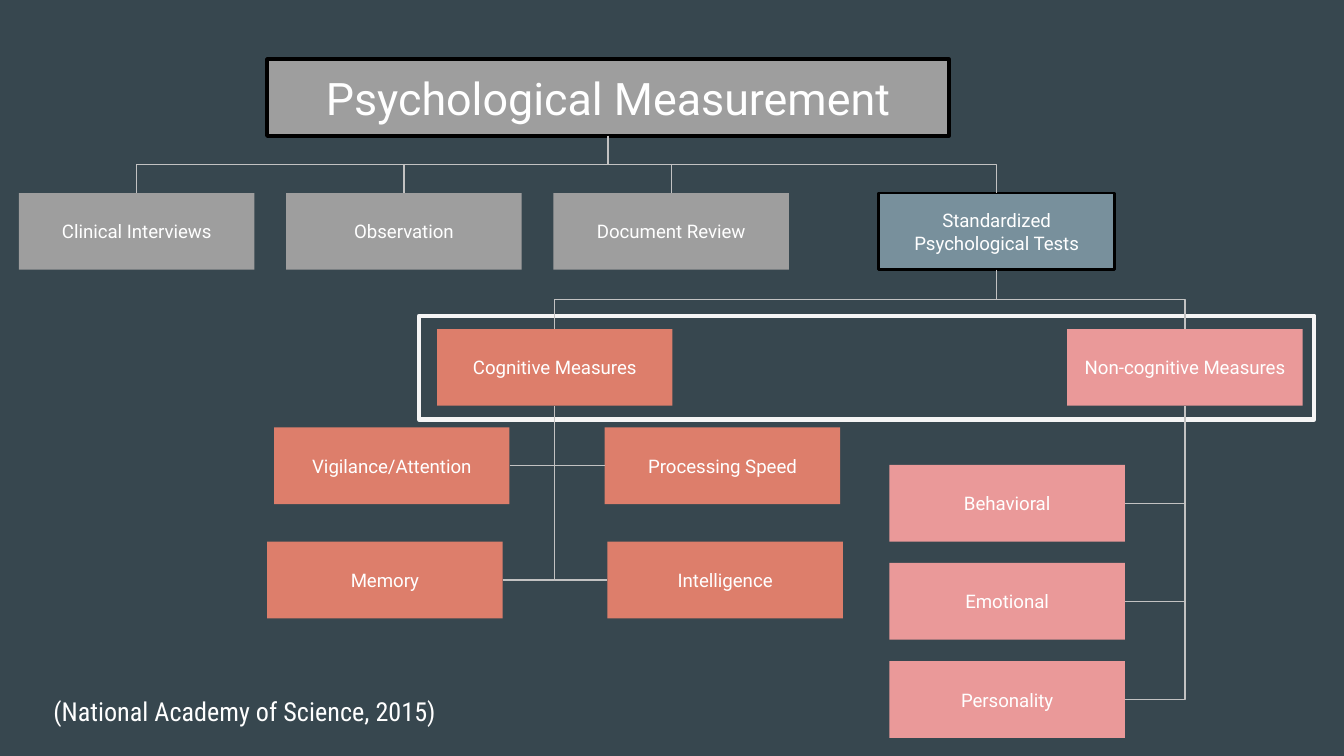
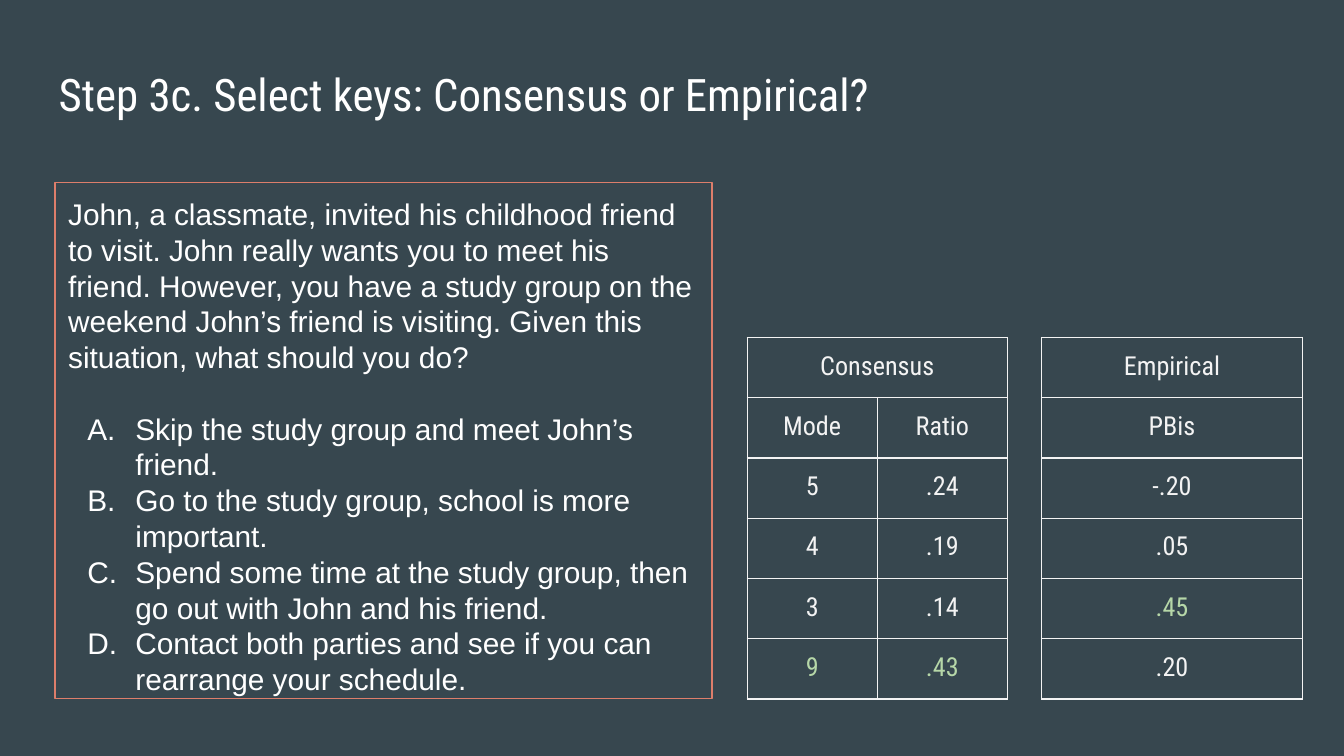
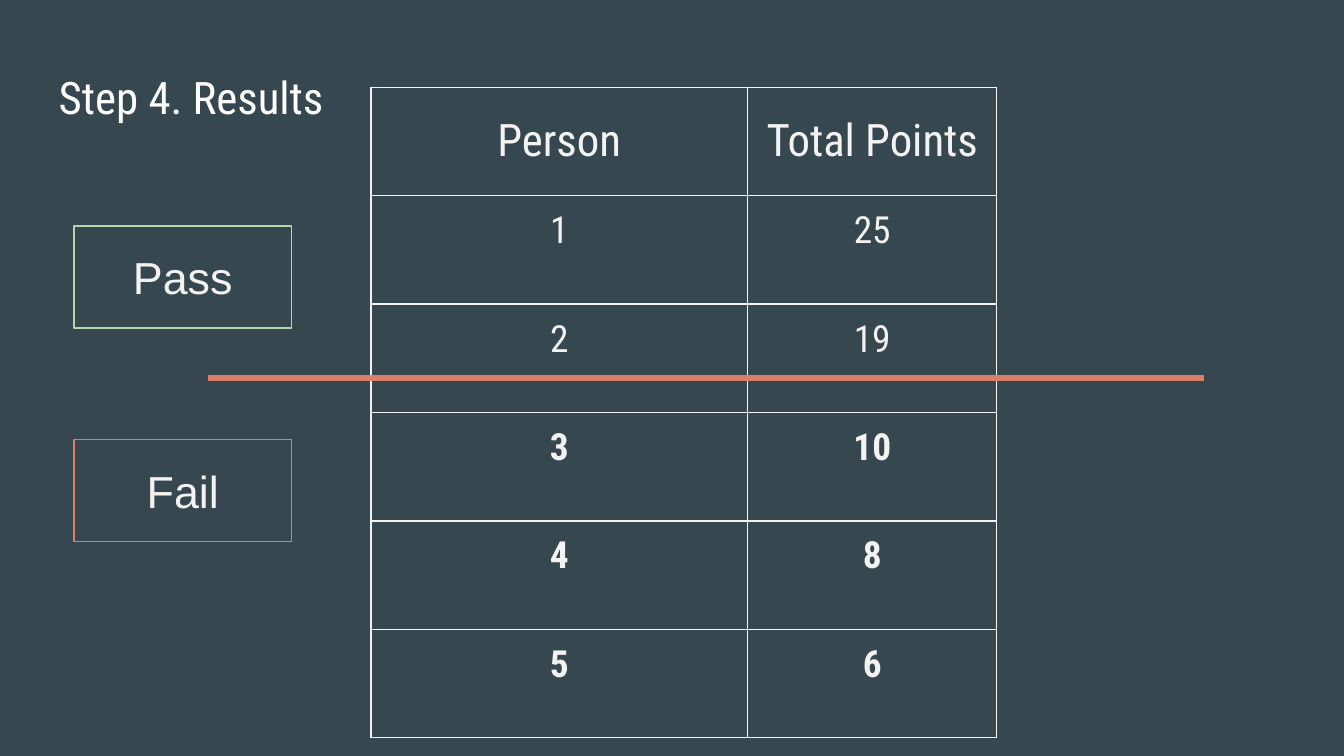
from lxml import etree
from pptx import Presentation
from pptx.dml.color import RGBColor
from pptx.enum.shapes import MSO_CONNECTOR, MSO_SHAPE
from pptx.enum.text import MSO_ANCHOR, MSO_AUTO_SIZE, PP_ALIGN
from pptx.oxml.ns import qn
from pptx.util import Cm, Pt

RECT = MSO_SHAPE.RECTANGLE
ELBOW, STRAIGHT = MSO_CONNECTOR.ELBOW, MSO_CONNECTOR.STRAIGHT
TOP, MIDDLE = MSO_ANCHOR.TOP, MSO_ANCHOR.MIDDLE
LEFT, CENTER = PP_ALIGN.LEFT, PP_ALIGN.CENTER
FIXED = MSO_AUTO_SIZE.NONE

HUES = {
    "back": "37474F", "white": "FFFFFF", "pale": "F3F3F3", "frame": "F5F5F5",
    "black": "000000", "gray": "9E9E9E", "steel": "78909C", "coral": "DD7E6B",
    "pink": "EA9999", "link": "C2C2C2", "green": "B6D7A8",
}
BODY, HEAD, PLAIN = "Roboto", "Roboto Condensed", "Arial"
PAD = Cm(0.25)
NODE = (4.45, 1.45)

ROOT = "Psychological Measurement"
TESTS = "Standardized Psychological Tests"
COG, NONCOG = "Cognitive Measures", "Non-cognitive Measures"
SOURCE = "(National Academy of Science, 2015)"
NODES = [
    ("Clinical Interviews", 0.36, 3.65, "gray"),
    ("Observation", 5.41, 3.65, "gray"),
    ("Document Review", 10.46, 3.65, "gray"),
    (NONCOG, 20.17, 6.22, "pink"),
    (COG, 8.26, 6.22, "coral"),
    ("Vigilance/Attention", 5.18, 8.08, "coral"),
    ("Processing Speed", 11.43, 8.08, "coral"),
    ("Memory", 5.05, 10.24, "coral"),
    ("Intelligence", 11.48, 10.24, "coral"),
    ("Behavioral", 16.81, 8.79, "pink"),
    ("Emotional", 16.81, 10.64, "pink"),
    ("Personality", 16.81, 12.5, "pink"),
]
DROPS = {
    ROOT: ["Clinical Interviews", "Observation", "Document Review", TESTS],
    TESTS: [COG, NONCOG],
}
SIDES = [
    (COG, 3, ["Vigilance/Attention", "Memory"]),
    (COG, 1, ["Processing Speed", "Intelligence"]),
    (NONCOG, 3, ["Behavioral", "Emotional", "Personality"]),
]

STORY = (
    "John, a classmate, invited his childhood friend to visit. John really "
    "wants you to meet his friend. However, you have a study group on the "
    "weekend John’s friend is visiting. Given this situation, what should "
    "you do?"
)
CHOICES = [
    "Skip the study group and meet John’s friend.",
    "Go to the study group, school is more important.",
    "Spend some time at the study group, then go out with John and his friend.",
    "Contact both parties and see if you can rearrange your schedule.",
]
KEYS = [
    (14.12, [("Consensus", None), ("Mode", "Ratio"), ("5", ".24"),
             ("4", ".19"), ("3", ".14"), ("9", ".43")], 5),
    (19.69, [("Empirical", None), ("PBis", None), ("-.20", None),
             (".05", None), (".45", None), (".20", None)], 4),
]

SCORES = [("Person", "Total Points"), ("1", "25"), ("2", "19"),
          ("3", "10"), ("4", "8"), ("5", "6")]
MARKS = [("Pass", 4.27, "green"), ("Fail", 8.31, "coral")]


def rgb(hue):
    return RGBColor.from_string(HUES[hue])


def write(para, text, size, face, hue="white", bold=False, align=LEFT):
    para.alignment = align
    run = para.add_run()
    run.text = text
    font = run.font
    font.size, font.name, font.bold = Pt(size), face, bold
    font.color.rgb = rgb(hue)


def set_frame(frame, anchor):
    frame.word_wrap = True
    frame.auto_size = FIXED
    frame.vertical_anchor = anchor
    frame.margin_left = frame.margin_right = PAD
    frame.margin_top = frame.margin_bottom = PAD


def add_box(shapes, place, fill=None, line=None, width=0.75, anchor=MIDDLE):
    box = shapes.add_shape(RECT, *map(Cm, place))
    box.shadow.inherit = False
    if fill:
        box.fill.solid()
        box.fill.fore_color.rgb = rgb(fill)
    else:
        box.fill.background()
    if line:
        box.line.color.rgb = rgb(line)
        box.line.width = Pt(width)
    else:
        box.line.fill.background()
    set_frame(box.text_frame, anchor)
    return box


def add_node(shapes, text, place, fill, size=10, **edge):
    box = add_box(shapes, place, fill, **edge)
    write(box.text_frame.paragraphs[0], text, size, BODY, align=CENTER)
    return box


def style_link(link, hue, width):
    link.line.color.rgb = rgb(hue)
    link.line.width = Pt(width)
    etree.SubElement(link._element.spPr, qn("a:effectLst"))


def join(shapes, start, start_side, end, end_side):
    link = shapes.add_connector(ELBOW, 0, 0, 0, 0)
    link.begin_connect(start, start_side)
    link.end_connect(end, end_side)
    style_link(link, "link", 0.75)
    return link


def drop(shapes, upper, lower):
    link = join(shapes, upper, 2, lower, 0)
    x1, y1, x2, y2 = link.begin_x, link.begin_y, link.end_x, link.end_y
    wide, tall = abs(x2 - x1), y2 - y1
    frame = link._element.spPr.find(qn("a:xfrm"))
    frame.attrib.clear()
    if x2 > x1:
        frame.set("rot", "16200000")
        frame.set("flipH", "1")
    else:
        frame.set("rot", "5400000")
    link.left, link.top = (x1 + x2 - tall) // 2, (y1 + y2 - wide) // 2
    link.width, link.height = tall, wide


def add_title(deck, text, top):
    slide = deck.slides.add_slide(deck.slide_layouts[5])
    title = slide.shapes.title
    title.left, title.top = Cm(0.86), Cm(top)
    title.width, title.height = Cm(23.67), Cm(1.7)
    set_frame(title.text_frame, TOP)
    write(title.text_frame.paragraphs[0], text, 24, HEAD)
    return slide


def style_cell(cell):
    cell.margin_left = cell.margin_right = PAD
    cell.margin_top = cell.margin_bottom = PAD
    props = cell._tc.get_or_add_tcPr()
    for side in ("lnL", "lnR", "lnT", "lnB"):
        edge = etree.SubElement(props, qn("a:" + side), w=str(Pt(0.75)))
        fill = etree.SubElement(edge, qn("a:solidFill"))
        etree.SubElement(fill, qn("a:srgbClr"), val=HUES["pale"])
    cell.fill.background()


def add_grid(slide, left, top, rows, cols, tall, style):
    shape = slide.shapes.add_table(
        len(rows), len(cols), Cm(left), Cm(top),
        Cm(sum(cols)), Cm(tall * len(rows)))
    grid = shape.table
    grid.first_row = grid.horz_banding = False
    for col, wide in zip(grid.columns, cols):
        col.width = Cm(wide)
    for r, row in enumerate(rows):
        grid.rows[r].height = Cm(tall)
        for c, text in enumerate(row):
            cell = grid.cell(r, c)
            style_cell(cell)
            if text is None:
                grid.cell(r, 0).merge(cell)
                continue
            size, hue, bold = style(r)
            write(cell.text_frame.paragraphs[0], text, size, HEAD, hue,
                  bold, CENTER)
    return grid


def build_tree(deck):
    shapes = deck.slides.add_slide(deck.slide_layouts[6]).shapes
    add_box(shapes, (7.92, 5.97, 16.92, 1.96), line="frame", width=2.25)
    nodes = {
        ROOT: add_node(shapes, ROOT, (5.05, 1.12, 12.88, 1.45), "gray", 24,
                       line="black", width=2.25),
        TESTS: add_node(shapes, TESTS, (16.61, 3.65, *NODE), "steel",
                        line="black", width=1.5),
    }
    for text, left, top, fill in NODES:
        nodes[text] = add_node(shapes, text, (left, top, *NODE), fill)
    for upper, lowers in DROPS.items():
        for lower in lowers:
            drop(shapes, nodes[upper], nodes[lower])
    for upper, side, lowers in SIDES:
        for lower in lowers:
            link = join(shapes, nodes[lower], side, nodes[upper], 2)
            shape = link._element.spPr.find(qn("a:prstGeom"))
            shape.set("prst", "bentConnector2")
    note = shapes.add_textbox(Cm(0.76), Cm(12.9), Cm(10.64), Cm(0.97))
    set_frame(note.text_frame, TOP)
    write(note.text_frame.paragraphs[0], SOURCE, 14, HEAD)


def build_keys(deck):
    slide = add_title(deck, "Step 3c. Select keys: Consensus or Empirical?", 1.02)
    box = add_box(slide.shapes, (1.04, 3.45, 12.42, 9.75), line="coral",
                  anchor=TOP)
    frame = box.text_frame
    write(frame.paragraphs[0], STORY, 16, PLAIN)
    for i, text in enumerate(CHOICES):
        para = frame.add_paragraph()
        props = para._p.get_or_add_pPr()
        props.set("marL", str(Cm(1.27)))
        props.set("indent", str(-Cm(0.91)))
        tint = etree.SubElement(props, qn("a:buClr"))
        etree.SubElement(tint, qn("a:srgbClr"), val=HUES["white"])
        etree.SubElement(props, qn("a:buFont"), typeface=PLAIN)
        etree.SubElement(props, qn("a:buAutoNum"), type="alphaUcPeriod")
        if i == 0:
            para.space_before = Pt(19)
        write(para, text, 16, PLAIN)
    for left, rows, best in KEYS:
        add_grid(slide, left, 6.38, rows, (2.46, 2.46), 1.14,
                 lambda r: (14, "green" if r == best else "pale", False))


def build_scores(deck):
    slide = add_title(deck, "Step 4. Results", 1.07)
    grid = add_grid(slide, 7.01, 1.65, SCORES, (7.12, 4.71), 2.05,
                    lambda r: (20 if r else 24, "pale", r > 2))
    for cell in grid.rows[0].cells:
        cell.vertical_anchor = MIDDLE
    parts = slide.shapes.add_group_shape().shapes
    cut = parts.add_connector(STRAIGHT, Cm(3.94), Cm(7.14), Cm(22.76), Cm(7.14))
    style_link(cut, "coral", 3)
    for text, top, hue in MARKS:
        box = add_box(parts, (1.4, top, 4.11, 1.93), line=hue)
        write(box.text_frame.paragraphs[0], text, 24, PLAIN, "pale",
              align=CENTER)


def main():
    deck = Presentation()
    deck.slide_width, deck.slide_height = Cm(25.4), Cm(14.29)
    back = deck.slide_master.background.fill
    back.solid()
    back.fore_color.rgb = rgb("back")
    build_tree(deck)
    build_keys(deck)
    build_scores(deck)
    deck.save("out.pptx")


if __name__ == "__main__":
    main()
